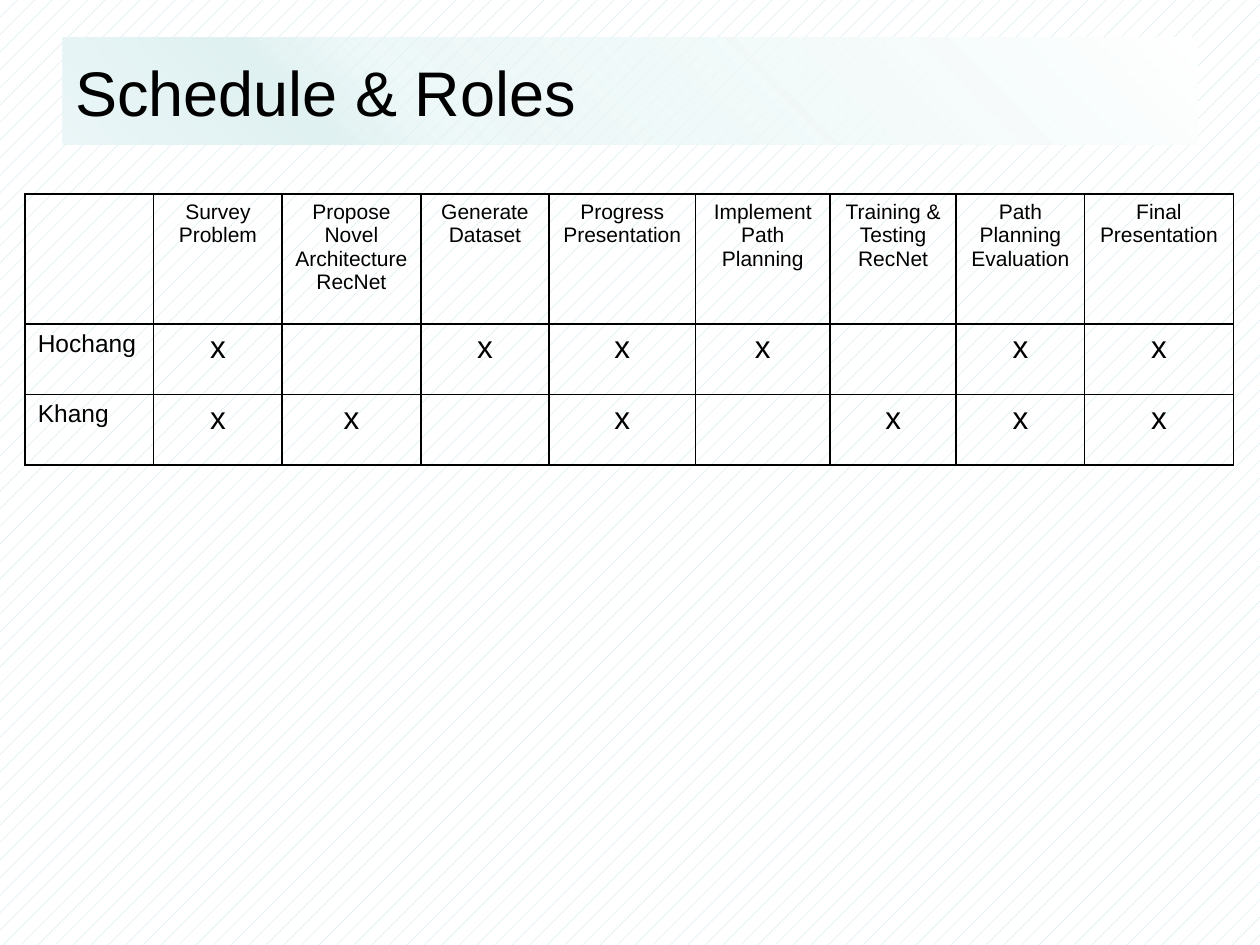
from typing import NamedTuple

from lxml.etree import SubElement
from pptx import Presentation
from pptx.dml.color import RGBColor
from pptx.enum.dml import MSO_PATTERN
from pptx.enum.shapes import MSO_SHAPE
from pptx.enum.text import MSO_ANCHOR, PP_ALIGN
from pptx.oxml.ns import qn
from pptx.util import Inches, Pt


class Stop(NamedTuple):
    place: int
    tint: str
    alpha: int = 100


class Role(NamedTuple):
    name: str
    marks: str


STOPS = [Stop(0, "FFFFFF"), Stop(69, "E2F3F3", 60), Stop(78, "E0F1F2"),
         Stop(79, "E0F1F2"), Stop(100, "EBF6F7")]
TASKS = ["Survey Problem", "Propose Novel Architecture RecNet",
         "Generate Dataset", "Progress\nPresentation",
         "Implement\nPath\nPlanning", "Training & Testing\nRecNet",
         "Path Planning\nEvaluation", "Final\nPresentation"]
ROLES = [Role("Hochang", "x-xxx-xx"), Role("Khang", "xx-x-xxx")]
WIDTHS = [1.02, 1.02, 1.1, 1.02, 1.16, 1.07, 1, 1.02, 1.18]
HEIGHTS = [1.03, 0.56, 0.56]


def color(code: str) -> RGBColor:
    return RGBColor.from_string(code)


def write(frame, text: str, size: int, align=PP_ALIGN.LEFT) -> None:
    frame.text = text
    for para in frame.paragraphs:
        para.alignment = align
        para.font.name = "Arial"
        para.font.size = Pt(size)
        para.font.color.rgb = color("000000")


def shade(shape, stops: list[Stop], angle: int) -> None:
    """Fill a shape with a linear gradient, its angle clockwise."""
    shape.fill.gradient()
    shape.fill.gradient_angle = 360 - angle
    group = shape._element.spPr.find(qn("a:gradFill")).find(qn("a:gsLst"))
    for old in list(group):
        group.remove(old)
    for stop in stops:
        node = SubElement(group, qn("a:gs"), pos=str(stop.place * 1000))
        tint = SubElement(node, qn("a:srgbClr"), val=stop.tint)
        if stop.alpha < 100:
            SubElement(tint, qn("a:alpha"), val=str(stop.alpha * 1000))


def frame_cell(cell) -> None:
    """Give a cell black borders and no fill."""
    props = cell._tc.get_or_add_tcPr()
    for side in ("lnL", "lnR", "lnT", "lnB"):
        line = SubElement(props, qn(f"a:{side}"), w=str(Pt(1)))
        fill = SubElement(line, qn("a:solidFill"))
        SubElement(fill, qn("a:srgbClr"), val="000000")
    cell.fill.background()


def add_title(slide, text: str) -> None:
    bar = slide.shapes.add_shape(MSO_SHAPE.RECTANGLE, Inches(0.5), Inches(0.3),
                                 Inches(9), Inches(0.85))
    bar.shadow.inherit = False
    bar.line.fill.background()
    shade(bar, STOPS, 135)
    bar.text_frame.vertical_anchor = MSO_ANCHOR.MIDDLE
    write(bar.text_frame, text, 36)


def add_plan(slide) -> None:
    table = slide.shapes.add_table(
        len(HEIGHTS), len(WIDTHS), Inches(0.2), Inches(1.54),
        Inches(sum(WIDTHS)), Inches(sum(HEIGHTS))).table
    table.first_row = table.horz_banding = False
    for col, width in zip(table.columns, WIDTHS):
        col.width = Inches(width)
    for row, height in zip(table.rows, HEIGHTS):
        row.height = Inches(height)
    for cell in table.iter_cells():
        frame_cell(cell)
    for c, task in enumerate(TASKS, 1):
        write(table.cell(0, c).text_frame, task, 12, PP_ALIGN.CENTER)
    for r, role in enumerate(ROLES, 1):
        write(table.cell(r, 0).text_frame, role.name, 14)
        for c, mark in enumerate(role.marks, 1):
            if mark == "x":
                write(table.cell(r, c).text_frame, mark, 18, PP_ALIGN.CENTER)


def main() -> None:
    deck = Presentation()
    deck.slide_width, deck.slide_height = Inches(10), Inches(7.5)
    slide = deck.slides.add_slide(deck.slide_layouts[6])
    back = slide.background.fill
    back.patterned()
    back.pattern = MSO_PATTERN.PERCENT_5
    back.fore_color.rgb = color("BBE0E3")
    back.back_color.rgb = color("FFFFFF")
    add_plan(slide)
    add_title(slide, "Schedule & Roles")
    deck.save("out.pptx")


if __name__ == "__main__":
    main()
